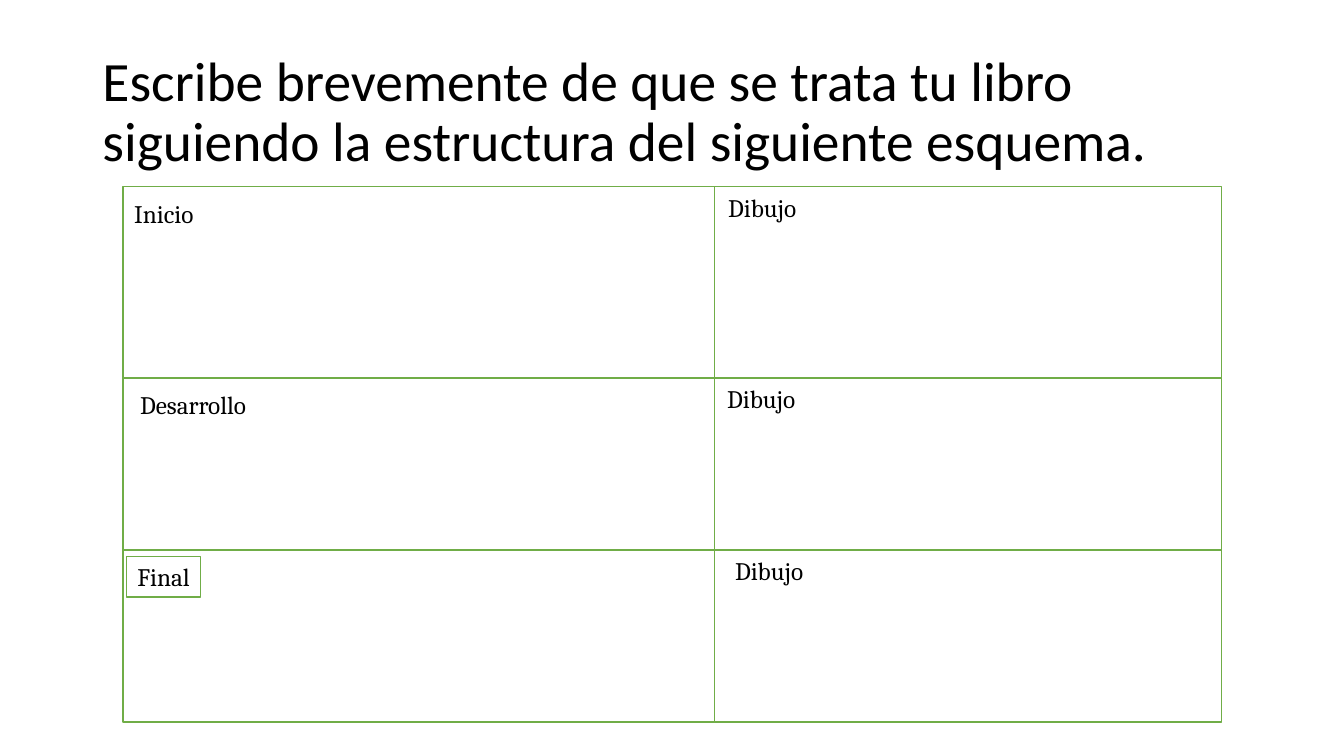
import pptx
import pptx.dml.color
import pptx.enum.shapes
import pptx.enum.text
import pptx.util

Pt = pptx.util.Pt
BLACK, WHITE, GREEN = "000000", "FFFFFF", "70AD47"


def paint(color, code):
    """Give a fill, line or font colour its hex value."""
    color.rgb = pptx.dml.color.RGBColor.from_string(code)


def place(shape, left, top, width, height):
    """Move and size a shape in points."""
    shape.left, shape.top = Pt(left), Pt(top)
    shape.width, shape.height = Pt(width), Pt(height)


def style(para, font, size):
    """Format the runs of a paragraph."""
    for run in para.runs:
        run.font.name = font
        run.font.size = Pt(size)
        paint(run.font.color, BLACK)


def add_title(slide, text):
    """Fill the title placeholder."""
    title = slide.shapes.title
    place(title, 66, 28.75, 828, 104.4)
    frame = title.text_frame
    frame.text = text
    frame.word_wrap = True
    frame.auto_size = pptx.enum.text.MSO_AUTO_SIZE.NONE
    frame.vertical_anchor = pptx.enum.text.MSO_ANCHOR.MIDDLE
    para = frame.paragraphs[0]
    para.alignment = pptx.enum.text.PP_ALIGN.LEFT
    para.line_spacing = 0.9
    style(para, "Calibri", 39.6)


def add_box(slide, left, top, width, height):
    """Add a white rectangle with a green outline."""
    kind = pptx.enum.shapes.MSO_SHAPE.RECTANGLE
    box = slide.shapes.add_shape(kind, Pt(left), Pt(top), Pt(width), Pt(height))
    box.shadow.inherit = False
    box.fill.solid()
    paint(box.fill.fore_color, WHITE)
    paint(box.line.color, GREEN)
    box.line.width = Pt(1)
    return box


def set_label(shape, text, wrap):
    """Write a centred label in a shape that grows with it."""
    frame = shape.text_frame
    frame.text = text
    frame.word_wrap = wrap
    frame.auto_size = pptx.enum.text.MSO_AUTO_SIZE.SHAPE_TO_FIT_TEXT
    para = frame.paragraphs[0]
    para.alignment = pptx.enum.text.PP_ALIGN.CENTER
    style(para, "Cambria", 18)


def add_label(slide, text, left, top, width, wrap):
    """Add a label without an outline."""
    label = slide.shapes.add_textbox(Pt(left), Pt(top), Pt(width), Pt(29.1))
    set_label(label, text, wrap)


def main():
    """Build and save the slide."""
    deck = pptx.Presentation()
    deck.slide_width, deck.slide_height = Pt(960), Pt(540)
    slide = deck.slides.add_slide(deck.slide_layouts[5])
    add_title(slide, "Escribe brevemente de que se trata tu libro "
                     "siguiendo la estructura del siguiente esquema.")

    cols = [(87.9, 422.6), (510.5, 362.2)]
    rows = [(133.2, 136.8), (270, 122.9), (392.9, 122.9)]
    for top, height in rows:
        for left, width in cols:
            add_box(slide, left, top, width, height)

    tops = [top for top, _ in rows]
    add_label(slide, "Inicio", 87.9, tops[0] + 5, 58.3, False)
    add_label(slide, "Desarrollo", 87.9, tops[1] + 4.5, 100, True)
    final = add_box(slide, 90.2, tops[2] + 4.5, 53.3, 29.1)
    set_label(final, "Final", False)
    for left, top, wrap in zip((511.2, 510.5, 516.2), tops, (False, False, True)):
        add_label(slide, "Dibujo", left, top + 0.4, 66.3, wrap)

    deck.save("out.pptx")


if __name__ == "__main__":
    main()
